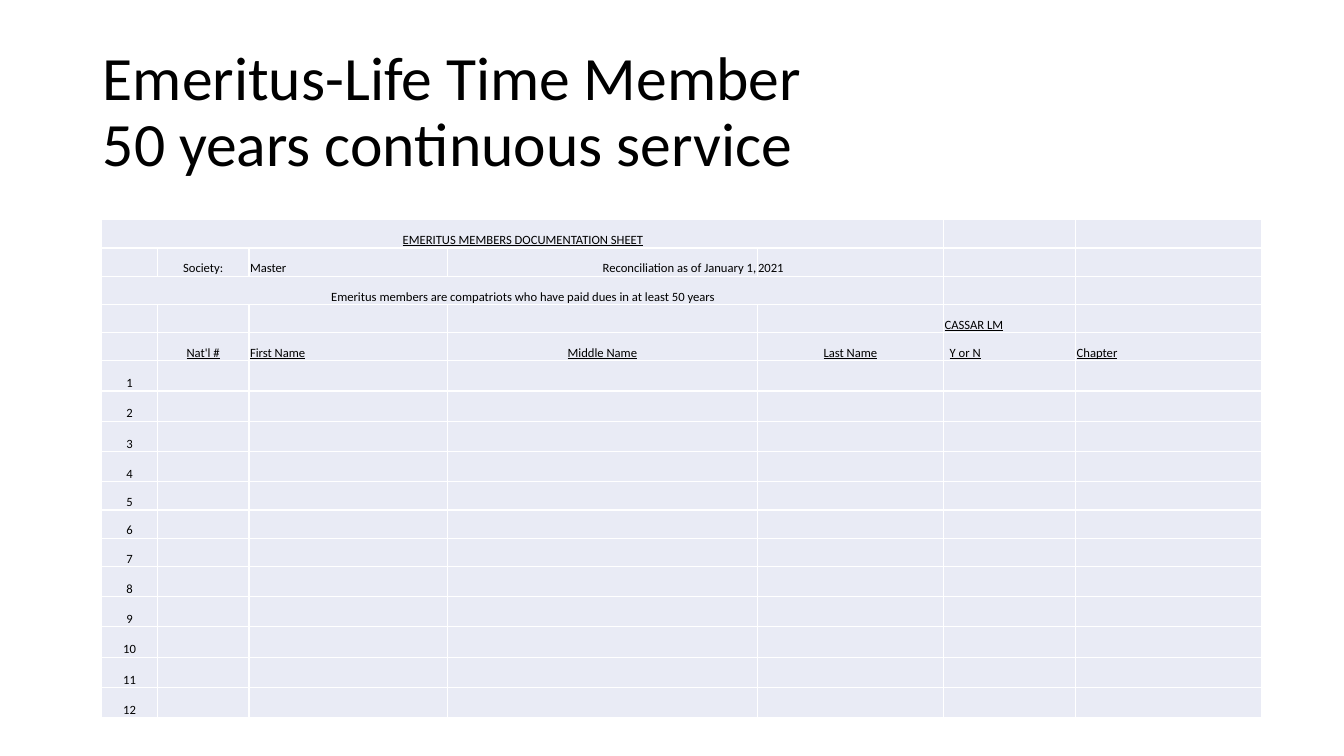
from lxml.etree import SubElement
from pptx import Presentation
from pptx.dml.color import RGBColor
from pptx.enum.text import MSO_ANCHOR, MSO_AUTO_SIZE, PP_ALIGN
from pptx.oxml.ns import qn
from pptx.util import Inches, Pt

COLORS = {"text": "000000", "cell": "E9EBF5", "border": "FFFFFF"}
FONT = "Calibri"
TITLE_LINES = ["Emeritus-Life Time Member", "50 years continuous service"]
COLUMN_WIDTHS = [0.55, 0.91, 1.97, 3.07, 1.85, 1.31, 1.84]
HEADER_ROWS = 5
MEMBER_ROWS = 12
SHORT_ROWS = {0, 1, 2, 3, 4, 9, 10, 11}
BANNER_ROWS = [0, 2]
BANNER_COLUMNS = 5
LEFT, CENTER, RIGHT = PP_ALIGN.LEFT, PP_ALIGN.CENTER, PP_ALIGN.RIGHT
HEADINGS = {
    (0, 0): ("EMERITUS MEMBERS DOCUMENTATION SHEET", CENTER, True),
    (1, 1): ("Society:", CENTER, False),
    (1, 2): ("Master", LEFT, False),
    (1, 3): ("Reconciliation as of January 1,", RIGHT, False),
    (1, 4): ("2021", LEFT, False),
    (2, 0): ("Emeritus members are compatriots who have paid dues in at least 50 years", CENTER, False),
    (3, 5): ("CASSAR LM", LEFT, True),
    (4, 1): ("Nat'l #", CENTER, True),
    (4, 2): ("First Name", LEFT, True),
    (4, 3): ("Middle Name", CENTER, True),
    (4, 4): ("Last Name", CENTER, True),
    (4, 5): ("Y or N", LEFT, True),
    (4, 6): ("Chapter", LEFT, True),
}


def add_span(para, text, size, underline=False):
    """Add one formatted run to a paragraph."""
    span = para.add_run()
    span.text = text
    span.font.name = FONT
    span.font.size = Pt(size)
    span.font.underline = underline
    span.font.color.rgb = RGBColor.from_string(COLORS["text"])


def set_title(page):
    """Place and fill the title placeholder."""
    title = page.shapes.title
    title.left, title.top = Inches(0.92), Inches(0.4)
    title.width, title.height = Inches(11.5), Inches(1.45)
    frame = title.text_frame
    frame.word_wrap = True
    frame.auto_size = MSO_AUTO_SIZE.NONE
    frame.vertical_anchor = MSO_ANCHOR.MIDDLE
    para = frame.paragraphs[0]
    para.alignment = LEFT
    para.line_spacing = 0.9
    add_span(para, TITLE_LINES[0], 44)
    para.add_line_break()
    add_span(para, TITLE_LINES[1], 44)


def add_borders(cell):
    """Draw a thin line on each side of a cell."""
    properties = cell._tc.get_or_add_tcPr()
    for side in ("a:lnL", "a:lnR", "a:lnT", "a:lnB"):
        line = SubElement(properties, qn(side), w=str(Pt(1)))
        fill = SubElement(line, qn("a:solidFill"))
        SubElement(fill, qn("a:srgbClr"), val=COLORS["border"])


def format_cell(cell):
    """Give a cell its borders, fill, margins and anchor."""
    add_borders(cell)
    cell.fill.solid()
    cell.fill.fore_color.rgb = RGBColor.from_string(COLORS["cell"])
    cell.margin_left = cell.margin_right = cell.margin_top = Inches(0.01)
    cell.margin_bottom = 0
    cell.vertical_anchor = MSO_ANCHOR.BOTTOM


def fill_cell(cell, content):
    """Write a cell's text, or set the type size of an empty cell."""
    para = cell.text_frame.paragraphs[0]
    if content is None:
        SubElement(para._p, qn("a:endParaRPr"), sz="900")
        return
    text, alignment, underline = content
    para.alignment = alignment
    add_span(para, text, 9, underline)


def add_member_table(page):
    """Add the documentation sheet with its numbered member rows."""
    contents = dict(HEADINGS)
    for number in range(1, MEMBER_ROWS + 1):
        contents[HEADER_ROWS + number - 1, 0] = (str(number), CENTER, False)
    row_count = HEADER_ROWS + MEMBER_ROWS
    table = page.shapes.add_table(
        row_count, len(COLUMN_WIDTHS), Inches(1.01), Inches(2.18), Inches(11.5), Inches(4.92)
    ).table
    table.first_row = False
    table.horz_banding = False
    for column, width in zip(table.columns, COLUMN_WIDTHS):
        column.width = Inches(width)
    for row_index, row in enumerate(table.rows):
        row.height = Inches(0.28 if row_index in SHORT_ROWS else 0.3)
        for column_index, cell in enumerate(row.cells):
            format_cell(cell)
            fill_cell(cell, contents.get((row_index, column_index)))
    for row_index in BANNER_ROWS:
        table.cell(row_index, 0).merge(table.cell(row_index, BANNER_COLUMNS - 1))
    table.cell(4, 5).margin_left = Inches(0.06)


def main():
    """Build and save the deck."""
    deck = Presentation()
    deck.slide_width, deck.slide_height = Inches(13.33), Inches(7.5)
    page = deck.slides.add_slide(deck.slide_layouts[5])
    set_title(page)
    add_member_table(page)
    deck.save("out.pptx")


if __name__ == "__main__":
    main()
